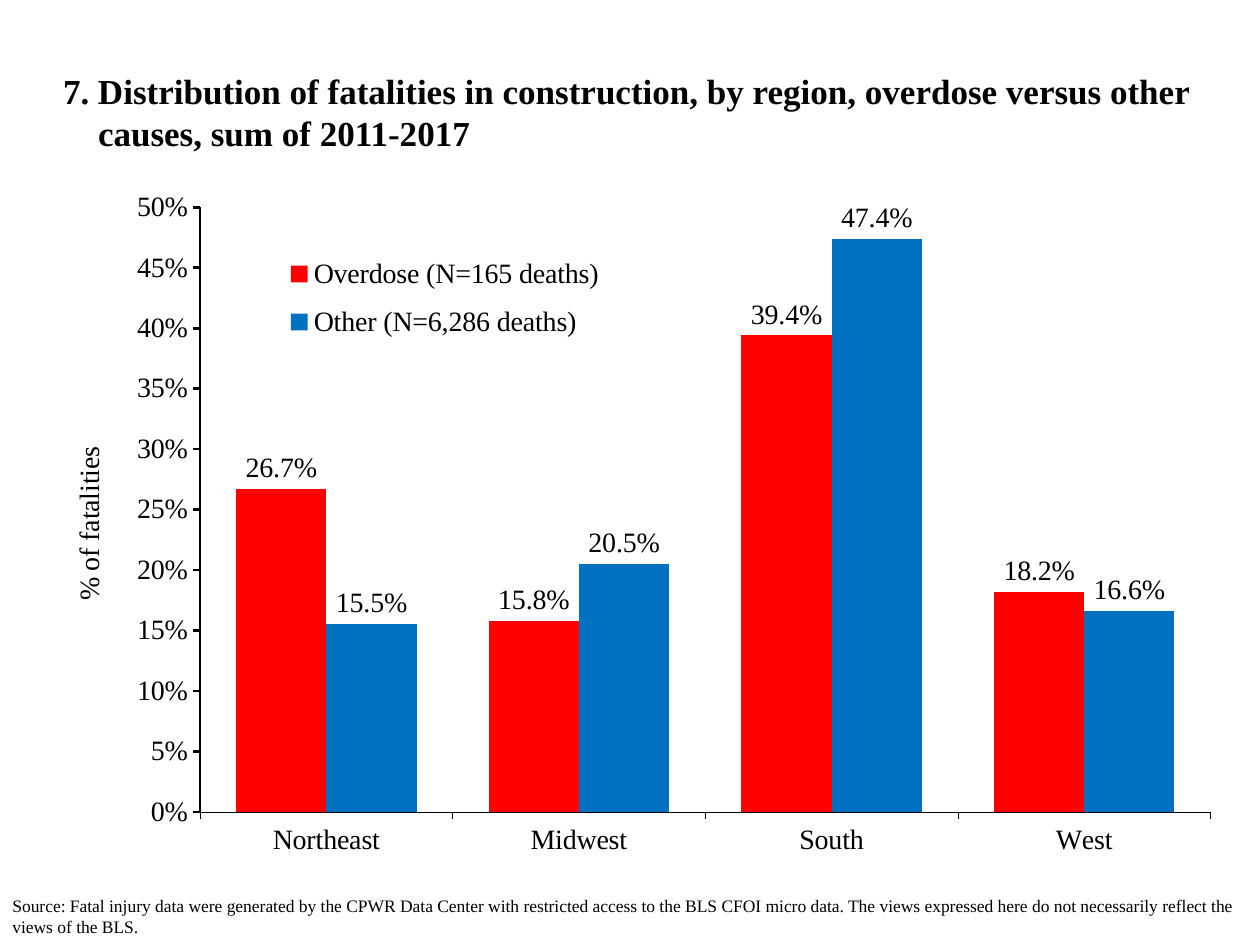
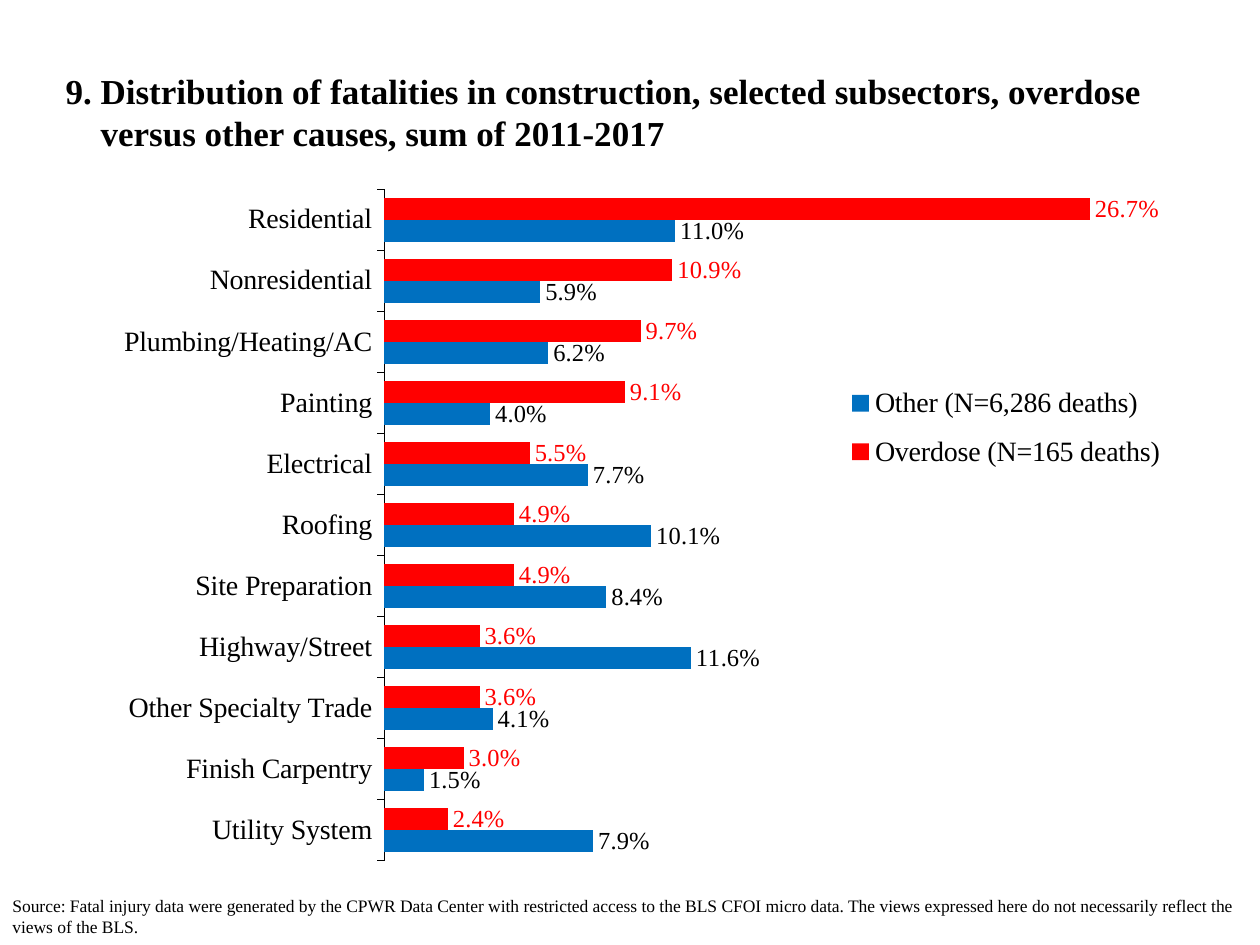
import dataclasses

import pptx
import pptx.chart.data
import pptx.dml.color
import pptx.enum.chart
import pptx.enum.text
import pptx.oxml
import pptx.oxml.ns
import pptx.util

XL = pptx.enum.chart
TXT = pptx.enum.text


@dataclasses.dataclass(frozen=True)
class Theme:
    """Hold the colours, font, type sizes and slide size shared by the slides."""
    font: str = "Times New Roman"
    black: str = "000000"
    white: str = "FFFFFF"
    overdose: str = "FF0000"
    other: str = "0070C0"
    title: int = 20
    chart: int = 16
    small_label: int = 14
    source: int = 10
    width: float = 10
    height: float = 7.5


THEME = Theme()
SOURCE_BOX = (0, 0.941, 1, 0.059)
SOURCE = ("Source: Fatal injury data were generated by the CPWR Data Center with restricted "
          "access to the BLS CFOI micro data. The views expressed here do not necessarily "
          "reflect the views of the BLS.")
OVERDOSE = "Overdose (N=165 deaths)"
OTHER = "Other (N=6,286 deaths)"

REGIONS = {
    "Northeast": (0.267, 0.155),
    "Midwest": (0.158, 0.205),
    "South": (0.394, 0.474),
    "West": (0.182, 0.166),
}
SUBSECTORS = {
    "Residential": (0.267, 0.110),
    "Nonresidential": (0.109, 0.059),
    "Plumbing/Heating/AC": (0.097, 0.062),
    "Painting": (0.091, 0.040),
    "Electrical": (0.055, 0.077),
    "Roofing": (0.049, 0.101),
    "Site Preparation": (0.049, 0.084),
    "Highway/Street": (0.036, 0.116),
    "Other Specialty Trade": (0.036, 0.041),
    "Finish Carpentry": (0.030, 0.015),
    "Utility System": (0.024, 0.079),
}


def rgb(code):
    """Turn a hex code into a colour."""
    return pptx.dml.color.RGBColor.from_string(code)


def apply(obj, **values):
    """Set each named attribute on an object."""
    for name, value in values.items():
        setattr(obj, name, value)


def style_font(font, size, color=THEME.black, bold=False):
    """Give a font the theme typeface with a size, colour and weight."""
    apply(font, name=THEME.font, size=pptx.util.Pt(size), bold=bold)
    font.color.rgb = rgb(color)


def place(box):
    """Turn shares of the slide into left, top, width and height."""
    sides = (THEME.width, THEME.height) * 2
    return [pptx.util.Inches(share * side) for share, side in zip(box, sides)]


def set_layout(parent, index, box, inner=False):
    """Fix a chart part at shares of the chart's size."""
    for old in parent.findall(pptx.oxml.ns.qn("c:layout")):
        parent.remove(old)
    target = '<c:layoutTarget val="inner"/>' if inner else ""
    modes = "".join(f'<c:{axis}Mode val="edge"/>' for axis in "xy")
    sizes = "".join(f'<c:{key} val="{share}"/>' for key, share in zip("xywh", box))
    parent.insert(index, pptx.oxml.parse_xml(
        f'<c:layout {pptx.oxml.ns.nsdecls("c")}><c:manualLayout>'
        f'{target}{modes}{sizes}</c:manualLayout></c:layout>'))


def add_title(s, box, text):
    """Fill the title placeholder as a numbered heading with a hanging indent."""
    sp = s.shapes.title
    left, top, width, height = place(box)
    apply(sp, left=left, top=top, width=width, height=height)
    tf = sp.text_frame
    apply(tf, text=text, word_wrap=True, auto_size=TXT.MSO_AUTO_SIZE.NONE,
          vertical_anchor=TXT.MSO_ANCHOR.TOP)
    p = tf.paragraphs[0]
    p.alignment = TXT.PP_ALIGN.LEFT
    hang = pptx.util.Pt(THEME.title)
    for name, value in {"marL": hang, "indent": -hang}.items():
        p._p.get_or_add_pPr().set(name, str(value))
    style_font(p.runs[0].font, THEME.title, bold=True)


def add_source(s, box):
    """Add the source note along the foot of the slide."""
    tf = s.shapes.add_textbox(*place(box)).text_frame
    apply(tf, word_wrap=True, text=SOURCE)
    style_font(tf.paragraphs[0].runs[0].font, THEME.source)


def add_chart(s, box, kind, rows, plot_box, legend_box, label_size, overdose_label):
    """Add a clustered chart of overdose against other causes."""
    data = pptx.chart.data.CategoryChartData(number_format="0.0%")
    data.categories = list(rows)
    for name, values in zip((OVERDOSE, OTHER), zip(*rows.values())):
        data.add_series(name, values)
    chart = s.shapes.add_chart(kind, *place(box), data).chart
    apply(chart, has_title=False, has_legend=True)
    style_font(chart.font, THEME.chart)
    plot = chart.plots[0]
    apply(plot, gap_width=80, overlap=0, vary_by_categories=False)
    looks = ((THEME.overdose, overdose_label), (THEME.other, THEME.black))
    for series, (fill, ink) in zip(plot.series, looks):
        series.invert_if_negative = False
        series.format.fill.solid()
        series.format.fill.fore_color.rgb = rgb(fill)
        labels = series.data_labels
        apply(labels, show_value=True, number_format="0.0%", number_format_is_linked=False,
              position=XL.XL_LABEL_POSITION.OUTSIDE_END)
        style_font(labels.font, label_size, ink)
    apply(chart.legend, position=XL.XL_LEGEND_POSITION.BOTTOM, include_in_layout=False)
    style_font(chart.legend.font, THEME.chart)
    set_layout(chart.legend._element, 1, legend_box)
    set_layout(chart._chartSpace.chart.plotArea, 0, plot_box, inner=True)
    style_axis(chart.category_axis, 0.25)
    return chart


def style_axis(axis, weight):
    """Draw an axis in black with outward ticks and no gridlines."""
    apply(axis, has_major_gridlines=False, major_tick_mark=XL.XL_TICK_MARK.OUTSIDE,
          minor_tick_mark=XL.XL_TICK_MARK.NONE)
    axis.format.line.color.rgb = rgb(THEME.black)
    axis.format.line.width = pptx.util.Pt(weight)
    style_font(axis.tick_labels.font, THEME.chart)


def add_slide(prs, title_box, title):
    """Start a white slide with its heading and source note."""
    s = prs.slides.add_slide(prs.slide_layouts[5])
    s.background.fill.solid()
    s.background.fill.fore_color.rgb = rgb(THEME.white)
    add_title(s, title_box, title)
    add_source(s, SOURCE_BOX)
    return s


def region_slide(prs):
    """Build the column chart of fatalities by region."""
    s = add_slide(prs, (0.04, 0.067, 0.921, 0.103),
                  "7. Distribution of fatalities in construction, by region, "
                  "overdose versus other causes, sum of 2011-2017")
    chart = add_chart(s, (0.04, 0.189, 0.921, 0.744), XL.XL_CHART_TYPE.COLUMN_CLUSTERED,
                      REGIONS, (0.129, 0.041, 0.871, 0.86), (0.2, 0.09, 0.28, 0.16),
                      THEME.chart, THEME.black)
    axis = chart.value_axis
    style_axis(axis, 1.5)
    apply(axis, minimum_scale=0, maximum_scale=0.5, major_unit=0.05)
    apply(axis.tick_labels, number_format="0%", number_format_is_linked=False)
    tf = axis.axis_title.text_frame
    tf.text = "% of fatalities"
    style_font(tf.paragraphs[0].runs[0].font, THEME.chart)


def subsector_slide(prs):
    """Build the bar chart of fatalities by subsector."""
    s = add_slide(prs, (0.042, 0.067, 0.917, 0.103),
                  "9. Distribution of fatalities in construction, selected subsectors, "
                  "overdose versus other causes, sum of 2011-2017")
    chart = add_chart(s, (0.042, 0.2, 0.917, 0.711), XL.XL_CHART_TYPE.BAR_CLUSTERED,
                      SUBSECTORS, (0.287, 0, 0.686, 1), (0.68, 0.27, 0.29, 0.17),
                      THEME.small_label, THEME.overdose)
    chart.category_axis.reverse_order = True
    apply(chart.value_axis, visible=False, has_major_gridlines=False,
          minimum_scale=0, maximum_scale=0.3)


def main():
    """Build and save the presentation."""
    prs = pptx.Presentation()
    apply(prs, slide_width=pptx.util.Inches(THEME.width),
          slide_height=pptx.util.Inches(THEME.height))
    region_slide(prs)
    subsector_slide(prs)
    prs.save("out.pptx")


if __name__ == "__main__":
    main()
